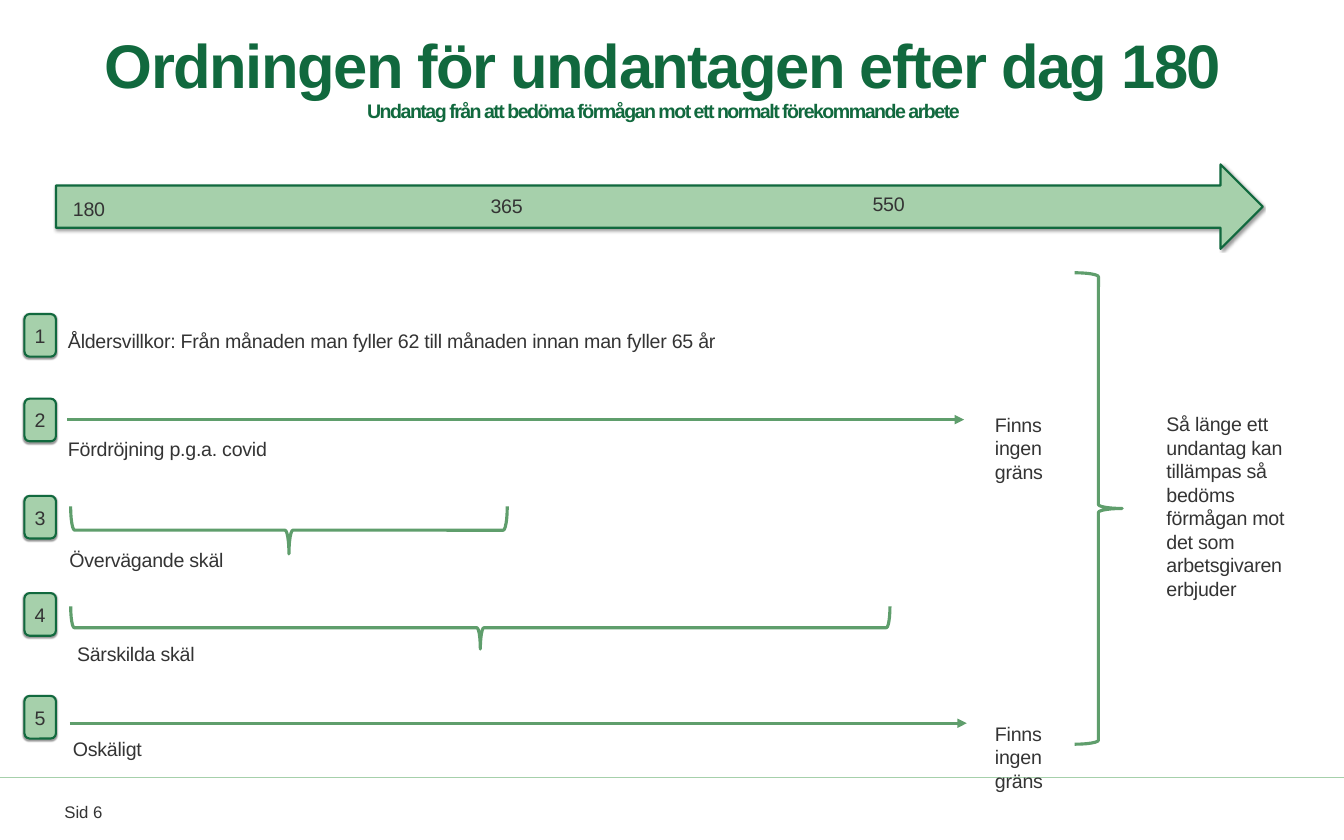
from dataclasses import dataclass

from lxml.etree import SubElement
from pptx import Presentation
from pptx.dml.color import RGBColor
from pptx.enum.shapes import MSO_CONNECTOR, MSO_SHAPE
from pptx.enum.text import MSO_ANCHOR, MSO_AUTO_SIZE, PP_ALIGN
from pptx.oxml.ns import qn
from pptx.util import Pt


@dataclass(frozen=True)
class Theme:
    font: str = "Arial"
    dark_green: RGBColor = RGBColor(0x11, 0x69, 0x3E)
    mid_green: RGBColor = RGBColor(0x5F, 0x9E, 0x6C)
    light_green: RGBColor = RGBColor(0xA6, 0xD0, 0xAB)
    ink: RGBColor = RGBColor(0x34, 0x34, 0x34)
    white: RGBColor = RGBColor(0xFF, 0xFF, 0xFF)
    title_size: float = 44
    text_size: float = 14
    footer_size: float = 12
    title_tracking: int = -110  # hundredths of a point
    text_tracking: int = -20


def apply_format(target, values):
    for name, value in values.items():
        setattr(target, name, value)


class SlideBuilder:
    def __init__(self, slide, theme):
        self.slide = slide
        self.theme = theme

    def add_text(self, paragraph, text, size=None, color=None, bold=False, tracking=0):
        run = paragraph.add_run()
        run.text = text
        apply_format(run.font, {"name": self.theme.font, "bold": bold,
                                "size": Pt(size or self.theme.text_size)})
        run.font.color.rgb = color or self.theme.ink
        if tracking:
            run.font._element.set("spc", str(tracking))

    def frame(self, shape, inset_x, inset_y, **values):
        apply_format(shape.text_frame, {
            "word_wrap": True, "auto_size": MSO_AUTO_SIZE.NONE,
            "margin_left": Pt(inset_x), "margin_right": Pt(inset_x),
            "margin_top": Pt(inset_y), "margin_bottom": Pt(inset_y), **values})
        return shape.text_frame.paragraphs[0]

    def title(self, heading, subheading, left, top, width, height):
        shape = self.slide.shapes.title
        apply_format(shape, {"left": Pt(left), "top": Pt(top),
                             "width": Pt(width), "height": Pt(height)})
        paragraph = self.frame(shape, 0, 0, vertical_anchor=MSO_ANCHOR.MIDDLE)
        apply_format(paragraph, {"alignment": PP_ALIGN.CENTER, "line_spacing": 0.9})
        style = {"color": self.theme.dark_green, "bold": True,
                 "tracking": self.theme.title_tracking}
        self.add_text(paragraph, heading, self.theme.title_size, **style)
        paragraph.add_line_break()
        self.add_text(paragraph, subheading, **style)

    def label(self, text, left, top, width, height=24.5):
        box = self.slide.shapes.add_textbox(Pt(left), Pt(top), Pt(width), Pt(height))
        paragraph = self.frame(box, 7.2, 3.6)
        paragraph.space_after = Pt(6)
        self.add_text(paragraph, text, tracking=self.theme.text_tracking)

    def footer(self, text, left, top, width, height):
        box = self.slide.shapes.add_textbox(Pt(left), Pt(top), Pt(width), Pt(height))
        self.add_text(self.frame(box, 0, 0), text, self.theme.footer_size)

    def block(self, kind, left, top, width, height, fill, outline=None):
        shape = self.slide.shapes.add_shape(kind, Pt(left), Pt(top), Pt(width), Pt(height))
        shape.fill.solid()
        shape.fill.fore_color.rgb = fill
        if outline is None:
            shape.line.fill.background()
        else:
            shape.line.color.rgb = outline
            shape.line.width = Pt(1.5)
        # Soft shadow straight below
        shape.shadow.inherit = False
        effects = shape._element.spPr.find(qn("a:effectLst"))
        shadow = SubElement(effects, qn("a:outerShdw"), blurRad=str(Pt(1)),
                            dist=str(Pt(1)), dir="5400000", rotWithShape="0")
        color = SubElement(shadow, qn("a:srgbClr"), val="000000")
        SubElement(color, qn("a:alpha"), val="40000")
        return shape

    def badge(self, number, left, top):
        shape = self.block(MSO_SHAPE.ROUNDED_RECTANGLE, left, top, 22.5, 30.5,
                           self.theme.light_green, self.theme.dark_green)
        paragraph = self.frame(shape, 3, 6, vertical_anchor=MSO_ANCHOR.MIDDLE)
        apply_format(paragraph, {"alignment": PP_ALIGN.CENTER, "space_after": Pt(6)})
        self.add_text(paragraph, str(number))

    def brace(self, left, top, width, height, downward=False):
        # A downward brace is a right brace turned a quarter about its centre
        if downward:
            left, top = left + (width - height) / 2, top + (height - width) / 2
            width, height = height, width
        shape = self.slide.shapes.add_shape(MSO_SHAPE.RIGHT_BRACE, Pt(left), Pt(top),
                                            Pt(width), Pt(height))
        shape.rotation = 90 if downward else 0
        shape.shadow.inherit = False
        shape.fill.background()
        shape.line.color.rgb = self.theme.mid_green
        shape.line.width = Pt(2.25)

    def line(self, left, right, y, color, weight, arrow=False):
        connector = self.slide.shapes.add_connector(
            MSO_CONNECTOR.STRAIGHT, Pt(left), Pt(y), Pt(right), Pt(y))
        connector.line.color.rgb = color
        connector.line.width = Pt(weight)
        properties = connector._element.spPr
        if arrow:
            SubElement(properties.find(qn("a:ln")), qn("a:tailEnd"), type="triangle")
        SubElement(properties, qn("a:effectLst"))


def main():
    theme = Theme()
    presentation = Presentation()
    apply_format(presentation, {"slide_width": Pt(960.5), "slide_height": Pt(600.5)})
    slide = presentation.slides.add_slide(presentation.slide_layouts[5])
    builder = SlideBuilder(slide, theme)

    # Footer band
    builder.block(MSO_SHAPE.RECTANGLE, 0, 556, 960.5, 44.5, theme.white)
    builder.footer("Sid 6", 46, 573, 340, 14.5)
    builder.line(0, 960.5, 556, theme.light_green, 1)

    # Heading
    builder.title("Ordningen för undantagen efter dag 180",
                  "Undantag från att bedöma förmågan mot ett normalt förekommande arbete",
                  49, 22.5, 850, 67.5)

    # Timeline with day marks
    builder.block(MSO_SHAPE.RIGHT_ARROW, 40, 117.5, 862.5, 60.5,
                  theme.light_green, theme.dark_green)
    for day, left, top in (("180", 45, 137.5), ("365", 343.5, 135), ("550", 616.5, 134)):
        builder.label(day, left, top, 40)

    # Numbered exceptions: badge top, text, text left, text top, text width
    exceptions = (
        (224.5, "Åldersvillkor: Från månaden man fyller 62 till månaden innan man fyller 65 år",
         41.5, 231.5, 490),
        (285, "Fördröjning p.g.a. covid", 41.5, 308.5, 165),
        (354.5, "Övervägande skäl", 42.5, 388, 136),
        (424, "Särskilda skäl", 48, 455.5, 136),
        (497.5, "Oskäligt", 45, 523, 136),
    )
    for number, (badge_top, text, left, top, width) in enumerate(exceptions, 1):
        builder.badge(number, 17.5, badge_top)
        builder.label(text, left, top, width)

    # Open-ended exceptions
    for left, y, note_top in ((48, 300, 291.5), (50, 517, 512.5)):
        builder.line(left, left + 641, y, theme.mid_green, 2.25, arrow=True)
        builder.label("Finns ingen gräns", 704, note_top, 50, 58.5)

    # Exceptions that end on a given day
    builder.brace(50.5, 362, 312, 34, downward=True)
    builder.brace(50.5, 433.5, 585.5, 30.5, downward=True)

    # Conclusion
    builder.brace(768, 195, 34, 337)
    builder.label("Så länge ett undantag kan tillämpas så bedöms förmågan mot "
                  "det som arbetsgivaren erbjuder", 826.5, 291, 117.5, 143.5)

    presentation.save("out.pptx")


if __name__ == "__main__":
    main()
